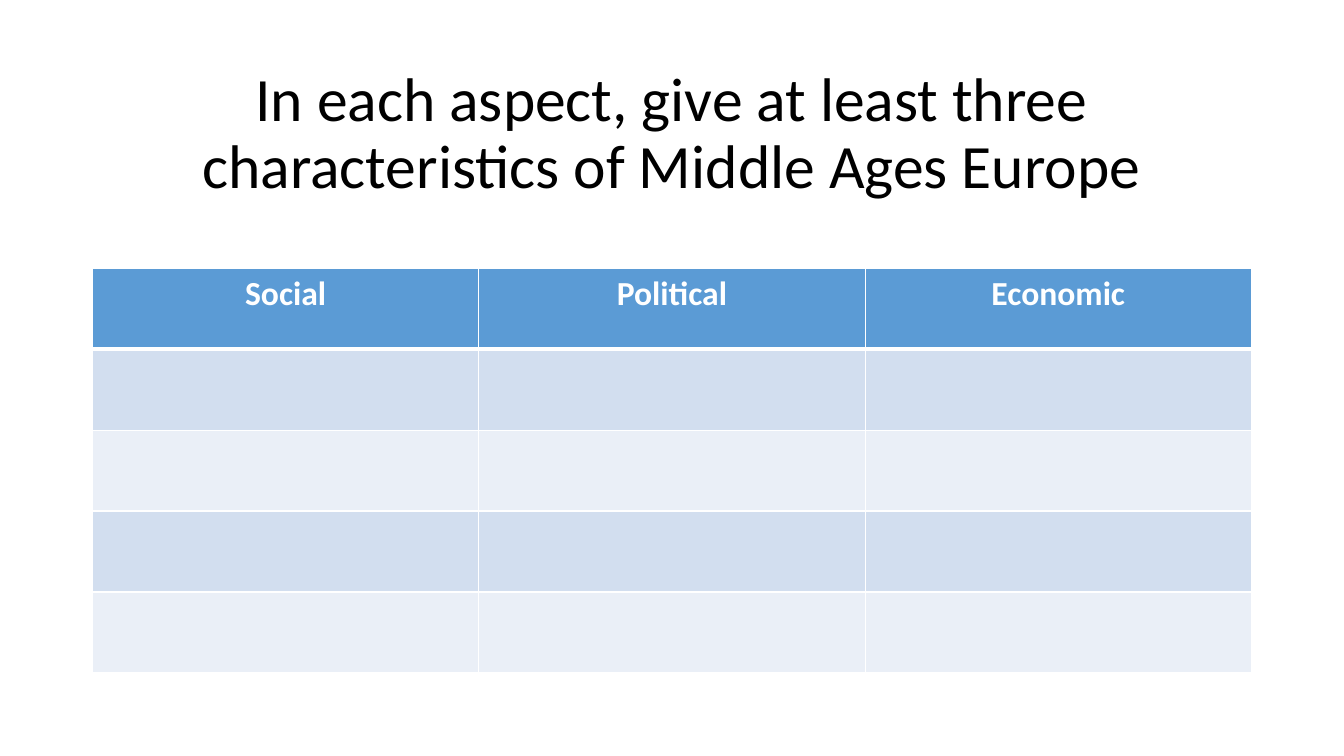
from dataclasses import dataclass

from lxml import etree
from pptx import Presentation
from pptx import util as u
from pptx.dml.color import RGBColor
from pptx.enum import text
from pptx.oxml import ns

# Content
TITLE = "In each aspect, give at least three characteristics of Middle Ages Europe"
HEADS = ["Social", "Political", "Economic"]
BLANKS = 4


@dataclass
class Theme:
    font: str = "Calibri"
    ink: str = "000000"
    white: str = "FFFFFF"
    head: str = "5B9BD5"
    bands: tuple = ("D2DEEF", "EAEFF7")
    big: int = 44
    mid: int = 24
    thin: int = 1
    thick: int = 3


theme = Theme()

# Layout in centimetres
LEFT, WIDE = 2.33, 29.21
TITLE_TOP, TITLE_HIGH = 1.01, 4.8
GRID_TOP, ROW_HIGH = 6.76, 2.04


def style(para, size, color, bold=False):
    para.alignment = text.PP_ALIGN.CENTER
    font = para.font
    font.name, font.size, font.bold = theme.font, u.Pt(size), bold
    font.color.rgb = RGBColor.from_string(color)


def border(cell, top, bottom):
    props = cell._tc.get_or_add_tcPr()
    sides = {"L": theme.thin, "R": theme.thin, "T": top, "B": bottom}
    for side, width in sides.items():
        line = etree.SubElement(props, ns.qn("a:ln" + side), w=str(u.Pt(width)))
        fill = etree.SubElement(line, ns.qn("a:solidFill"))
        etree.SubElement(fill, ns.qn("a:srgbClr"), val=theme.white)


def add_title(slide):
    box = slide.shapes.add_textbox(
        u.Cm(LEFT), u.Cm(TITLE_TOP), u.Cm(WIDE), u.Cm(TITLE_HIGH))
    frame = box.text_frame
    frame.word_wrap = True
    frame.vertical_anchor = text.MSO_ANCHOR.MIDDLE
    frame.text = TITLE
    para = frame.paragraphs[0]
    para.line_spacing = 0.9
    style(para, theme.big, theme.ink)


def add_grid(slide):
    rows = BLANKS + 1
    grid = slide.shapes.add_table(
        rows, len(HEADS), u.Cm(LEFT), u.Cm(GRID_TOP),
        u.Cm(WIDE), u.Cm(rows * ROW_HIGH)).table
    for r in range(rows):
        color = theme.bands[(r - 1) % 2] if r else theme.head
        top = theme.thick if r == 1 else theme.thin
        bottom = theme.thin if r else theme.thick
        for c, head in enumerate(HEADS):
            cell = grid.cell(r, c)
            border(cell, top, bottom)
            cell.fill.solid()
            cell.fill.fore_color.rgb = RGBColor.from_string(color)
            if r == 0:
                cell.text = head
                style(cell.text_frame.paragraphs[0], theme.mid, theme.white, True)


def main():
    deck = Presentation()
    deck.slide_width, deck.slide_height = u.Cm(33.87), u.Cm(19.05)
    slide = deck.slides.add_slide(deck.slide_layouts[6])
    add_title(slide)
    add_grid(slide)
    deck.save("out.pptx")


if __name__ == "__main__":
    main()
